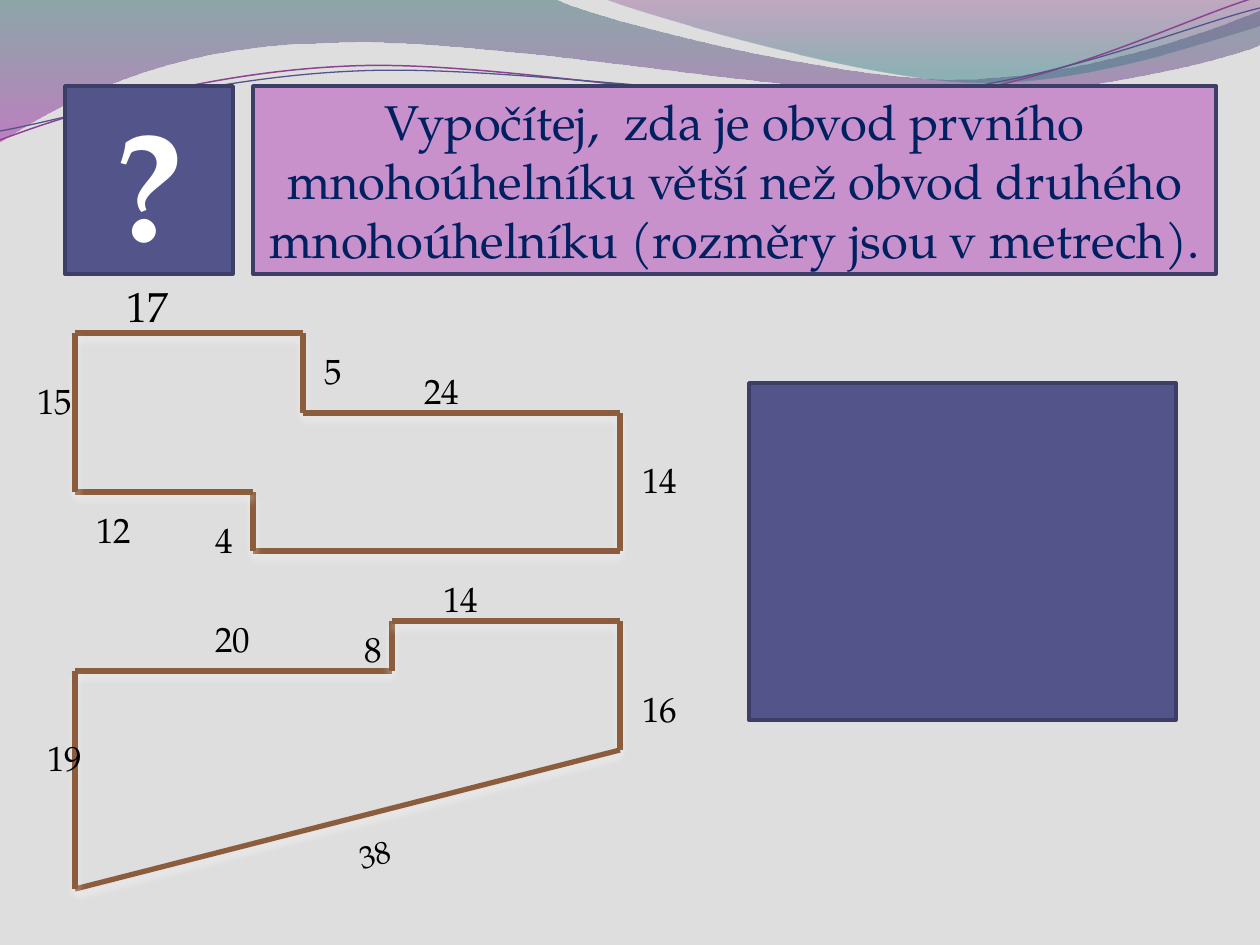
from lxml import etree
from pptx import Presentation
from pptx.dml.color import RGBColor
from pptx.enum.shapes import MSO_CONNECTOR, MSO_SHAPE
from pptx.enum.text import MSO_ANCHOR, MSO_AUTO_SIZE, PP_ALIGN
from pptx.oxml import parse_xml
from pptx.oxml.ns import nsdecls, qn
from pptx.util import Emu, Pt

RECT, STRAIGHT = MSO_SHAPE.RECTANGLE, MSO_CONNECTOR.STRAIGHT
CENTER, MIDDLE = PP_ALIGN.CENTER, MSO_ANCHOR.MIDDLE
GROW = MSO_AUTO_SIZE.SHAPE_TO_FIT_TEXT
FONT = "TeX Gyre Pagella"
GREY = RGBColor(0xDE, 0xDE, 0xDE)
INDIGO = RGBColor(0x53, 0x54, 0x8A)
DARK_INDIGO = RGBColor(0x3D, 0x3E, 0x66)
PINK = RGBColor(0xC9, 0x91, 0xCB)
NAVY = RGBColor(0x00, 0x20, 0x60)
BROWN = RGBColor(0x8B, 0x5D, 0x3D)
WHITE = RGBColor(0xFF, 0xFF, 0xFF)
BLACK = RGBColor(0, 0, 0)
PLUM = RGBColor(0x8D, 0x44, 0x90)
TEAL_DARK = RGBColor(0x2D, 0x63, 0x68)
TEAL = RGBColor(0x2F, 0x7B, 0x82)
VIOLET = RGBColor(0xA5, 0x30, 0xA9)
PURPLE = RGBColor(0x7F, 0x2F, 0x82)
SHADOW = (
    f'<a:effectLst {nsdecls("a")}><a:outerShdw blurRad="{Pt(4.5)}" '
    f'dist="{Pt(3)}" dir="5400000" rotWithShape="0"><a:srgbClr val="{WHITE}">'
    '<a:alpha val="48000"/></a:srgbClr></a:outerShdw></a:effectLst>'
)


def px(n):
    return Emu(round(n * 914400 / 126))


def add_curve(s, x, y, segments, close):
    points = [(px(x + seg[i]), px(y + seg[i + 1]))
              for seg in segments for i in range(0, len(seg), 2)]
    fb = s.shapes.build_freeform(*points[0], scale=1.0)
    fb.add_line_segments(points[1:], close=close)
    sp = fb.convert_to_shape()
    sp.shadow.inherit = False
    lines = iter(list(sp._element.iter(qn("a:lnTo"))))
    for seg in segments[1:]:
        first = next(lines)
        if len(seg) == 6:
            first.tag = qn("a:cubicBezTo")
            for _ in range(2):
                line = next(lines)
                first.append(line[0])
                line.getparent().remove(line)
    return sp


def add_band(s, x, y, segments, stops):
    sp = add_curve(s, x, y, segments, True)
    sp.line.fill.background()
    sp.fill.gradient()
    sp.fill.gradient_angle = 270
    for stop, (position, color, _) in zip(sp.fill.gradient_stops, stops):
        stop.position = position
        stop.color.rgb = color
    colors = sp._element.spPr.iter(qn("a:srgbClr"))
    for color, (_, _, opacity) in zip(colors, stops):
        etree.SubElement(color, qn("a:alpha")).set("val", str(opacity * 1000))


def add_waves(s, x, y):
    add_band(s, x, y, [
        (0, 0), (554, -1), (600, 21, 837, 79, 955, 79),
        (1075, 79, 1207, 33, 1260, 11), (1261, 45),
        (1239, 55, 1096, 96, 940, 95), (784, 95, 481, 35, 324, 43),
        (163, 45, 58, 105, -1, 142),
    ], [(0, TEAL_DARK, 45), (1, VIOLET, 55)])
    add_band(s, x, y, [
        (604, -1), (641, 14, 859, 78, 969, 82),
        (1079, 87, 1211, 40, 1260, 26), (1260, 0),
    ], [(0, PURPLE, 30), (0.8, TEAL, 45)])
    for color, width, segments in [
        (PLUM, 0.85, [(0, 140), (60, 117, 199, 72, 349, 66),
                      (498, 59, 747, 112, 898, 101),
                      (1050, 89, 1182, 19, 1257, -3)]),
        (INDIGO, 0.75, [(0, 131), (59, 121, 207, 77, 357, 71),
                        (508, 64, 752, 106, 903, 95),
                        (1053, 84, 1186, 26, 1260, 8)]),
    ]:
        sp = add_curve(s, x, y, segments, False)
        sp.fill.background()
        sp.line.color.rgb = color
        sp.line.width = Pt(width)


def set_text(tf, text, size, color, bold=False, align=None):
    tf.word_wrap = True
    p = tf.paragraphs[0]
    p.text = text
    p.alignment = align
    p.font.name = FONT
    p.font.size = Pt(size)
    p.font.bold = bold
    p.font.color.rgb = color


def add_panel(s, x, y, w, h, fill):
    sp = s.shapes.add_shape(RECT, px(x), px(y), px(w), px(h))
    sp.shadow.inherit = False
    sp.fill.solid()
    sp.fill.fore_color.rgb = fill
    sp.line.color.rgb = DARK_INDIGO
    sp.line.width = Pt(2)
    return sp


def add_header(s, x, y, w, h):
    mark_w, gap = 168, 20
    left = mark_w + gap
    for dx, width, fill, text, size, color, bold in [
        (0, mark_w, INDIGO, "?", 88, WHITE, True),
        (left, w - left, PINK,
         "Vypočítej,  zda je obvod prvního mnohoúhelníku větší než obvod "
         "druhého mnohoúhelníku (rozměry jsou v metrech).", 28, NAVY, False),
    ]:
        tf = add_panel(s, x + dx, y, width, h, fill).text_frame
        tf.vertical_anchor = MIDDLE
        set_text(tf, text, size, color, bold, CENTER)


def add_polygon(s, x, y, corners, labels):
    for (ax, ay), (bx, by) in zip(corners, corners[1:] + corners[:1]):
        c = s.shapes.add_connector(
            STRAIGHT, px(x + ax), px(y + ay), px(x + bx), px(y + by))
        c.line.color.rgb = BROWN
        c.line.width = Pt(3)
        c._element.spPr.append(parse_xml(SHADOW))
    for text, dx, dy, w, h, size, angle in labels:
        tb = s.shapes.add_textbox(px(x + dx), px(y + dy), px(w), px(h))
        tb.rotation = angle
        set_text(tb.text_frame, text, size, BLACK)
        tb.text_frame.auto_size = GROW


def main():
    prs = Presentation()
    prs.slide_width, prs.slide_height = px(1260), px(945)
    s = prs.slides.add_slide(prs.slide_layouts[6])
    s.background.fill.solid()
    s.background.fill.fore_color.rgb = GREY

    add_waves(s, 0, 0)
    add_header(s, 65, 86, 1151, 188)
    add_polygon(
        s, 75, 333,
        [(0, 0), (228, 0), (228, 80), (545, 80),
         (545, 218), (178, 218), (178, 159), (0, 159)],
        [("17", 39, -59, 139, 63, 24, 0),
         ("5", 237, 10, 79, 55, 20, 0),
         ("24", 337, 30, 169, 55, 20, 0),
         ("14", 555, 119, 89, 55, 20, 0),
         ("4", 128, 179, 59, 55, 20, 0),
         ("12", 9, 169, 110, 55, 20, 0),
         ("15", -50, 40, 84, 55, 20, 0)])
    add_polygon(
        s, 75, 621,
        [(0, 50), (317, 50), (317, 0), (545, 0), (545, 129), (0, 268)],
        [("16", 555, 60, 79, 55, 20, 0),
         ("38", 270, 191, 198, 50, 18, 346.8),
         ("14", 356, -50, 129, 55, 20, 0),
         ("8", 277, 0, 100, 55, 20, 0),
         ("20", 128, -10, 100, 55, 20, 0),
         ("19", -40, 109, 115, 55, 20, 0)])
    add_panel(s, 749, 383, 427, 337, INDIGO)
    prs.save("out.pptx")


if __name__ == "__main__":
    main()
